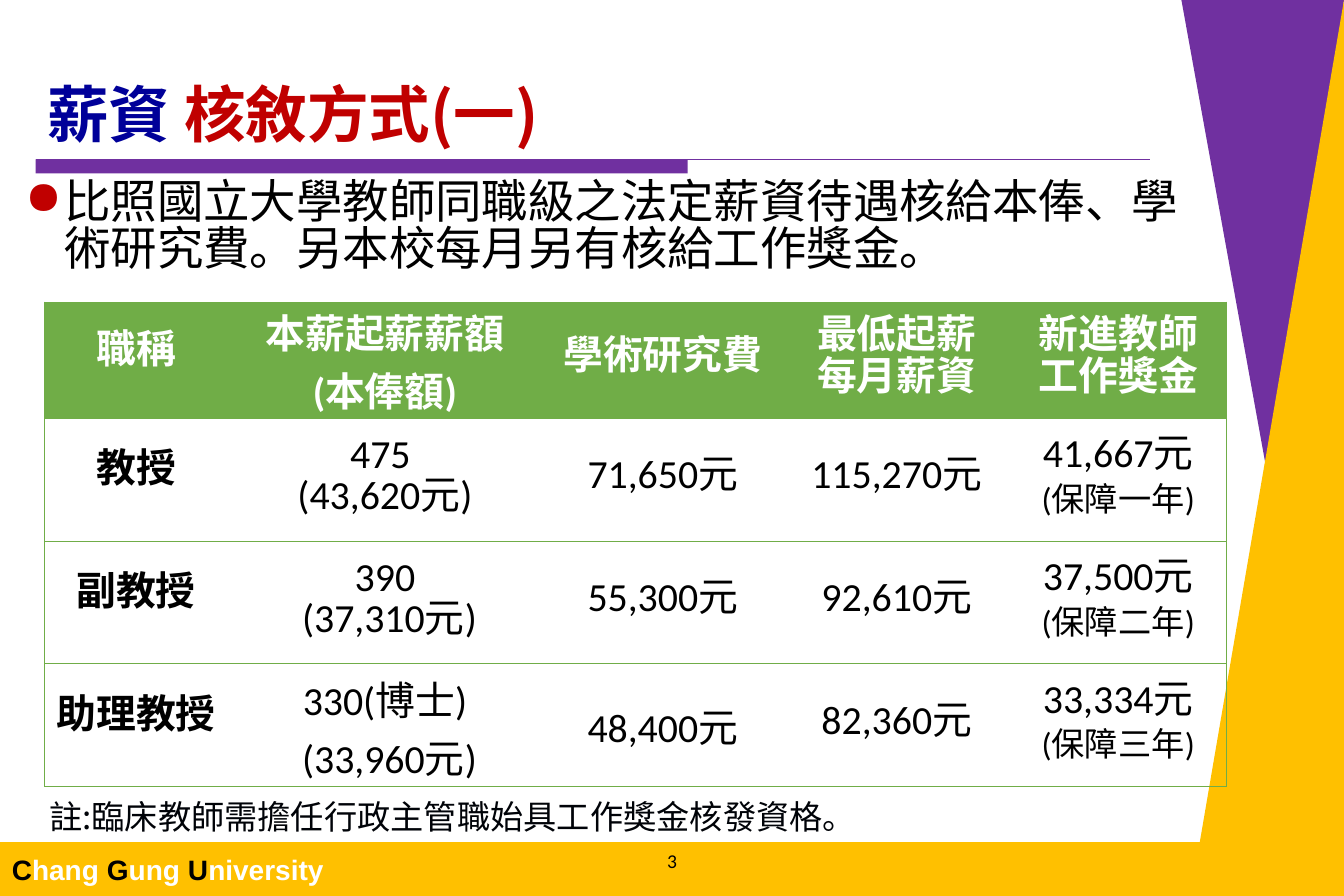
from lxml import etree
from pptx import Presentation
from pptx import util as u
from pptx.dml.color import RGBColor
from pptx.enum import shapes, text
from pptx.oxml.ns import qn

PURPLE = RGBColor(0x70, 0x30, 0xA0)
GOLD = RGBColor(0xFF, 0xC0, 0x00)
GREEN = RGBColor(0x70, 0xAD, 0x47)
NAVY = RGBColor(0x00, 0x00, 0x99)
RED = RGBColor(0xC0, 0x00, 0x00)
INK = RGBColor(0x00, 0x03, 0x08)
BLACK = RGBColor(0x00, 0x00, 0x00)
WHITE = RGBColor(0xFF, 0xFF, 0xFF)
CJK = "Noto Sans CJK SC"
CENTER = text.PP_ALIGN.CENTER
MIDDLE = text.MSO_ANCHOR.MIDDLE


def add_run(p, content, size=24, font="Calibri", color=BLACK, bold=False):
    r = p.add_run()
    r.text = content
    r.font.size, r.font.name, r.font.bold = u.Pt(size), font, bold
    r.font.color.rgb = color
    ea = etree.SubElement(r._r.get_or_add_rPr(), qn("a:ea"))
    ea.set("typeface", CJK)


def write(p, content, align=None, spacing=None, **fmt):
    """Fill a paragraph; a newline in the content is a line break."""
    p.alignment = align
    if spacing:
        p.line_spacing = spacing
    for i, line in enumerate(content.split("\n")):
        if i:
            p.add_line_break()
        add_run(p, line, **fmt)


class Deck:
    def __init__(self, width, height):
        self.prs = Presentation()
        self.prs.slide_width, self.prs.slide_height = u.Pt(width), u.Pt(height)
        self.s = self.prs.slides.add_slide(self.prs.slide_layouts[6])

    def paint(self, sp, color):
        sp.shadow.inherit = False
        sp.fill.solid()
        sp.fill.fore_color.rgb = color
        sp.line.fill.background()
        return sp

    def polygon(self, points, color):
        fb = self.s.shapes.build_freeform(*points[0], scale=float(u.Pt(1)))
        fb.add_line_segments(points[1:], close=True)
        return self.paint(fb.convert_to_shape(), color)

    def rect(self, box, color):
        sp = self.s.shapes.add_shape(shapes.MSO_SHAPE.RECTANGLE, *map(u.Pt, box))
        return self.paint(sp, color)

    def line(self, x1, y1, x2, y2, color, width):
        c = self.s.shapes.add_connector(
            shapes.MSO_CONNECTOR.STRAIGHT, *map(u.Pt, (x1, y1, x2, y2)))
        c.line.color.rgb, c.line.width = color, u.Pt(width)
        etree.SubElement(c._element.spPr, qn("a:effectLst"))

    def textbox(self, box, anchor=text.MSO_ANCHOR.TOP):
        tf = self.s.shapes.add_textbox(*map(u.Pt, box)).text_frame
        tf.word_wrap, tf.vertical_anchor = True, anchor
        return tf.paragraphs[0]

    def bullet(self, p, char, color, indent):
        pPr = p._p.get_or_add_pPr()
        pPr.set("marL", str(u.Pt(indent)))
        pPr.set("indent", str(-u.Pt(indent)))
        clr = etree.SubElement(pPr, qn("a:buClr"))
        etree.SubElement(clr, qn("a:srgbClr")).set("val", str(color))
        etree.SubElement(pPr, qn("a:buChar")).set("char", char)

    def borders(self, cell, sides, color, width):
        tcPr = cell._tc.get_or_add_tcPr()
        for i, side in enumerate("LRTB"):
            ln = etree.Element(qn("a:ln" + side), w=str(u.Pt(width)))
            if side in sides:
                fill = etree.SubElement(ln, qn("a:solidFill"))
                etree.SubElement(fill, qn("a:srgbClr")).set("val", str(color))
            else:
                etree.SubElement(ln, qn("a:noFill"))
            tcPr.insert(i, ln)

    def table(self, x, y, widths, heights):
        tbl = self.s.shapes.add_table(
            len(heights), len(widths),
            *map(u.Pt, (x, y, sum(widths), sum(heights)))).table
        tbl.first_row = tbl.horz_banding = False
        for col, w in zip(tbl.columns, widths):
            col.width = u.Pt(w)
        for row, h in zip(tbl.rows, heights):
            row.height = u.Pt(h)
        return tbl

    def cell(self, cell, lines, fill=None, side=5.2, top=0):
        """Lines are (content, format) pairs, one paragraph each."""
        cell.margin_left = cell.margin_right = u.Pt(side)
        cell.margin_top = cell.margin_bottom = u.Pt(top)
        cell.vertical_anchor = MIDDLE
        if fill is None:
            cell.fill.background()
        else:
            cell.fill.solid()
            cell.fill.fore_color.rgb = fill
        tf = cell.text_frame
        for i, (content, fmt) in enumerate(lines):
            p = tf.add_paragraph() if i else tf.paragraphs[0]
            write(p, content, align=CENTER, **fmt)


ROWS = [
    [["職稱"], ["本薪起薪薪額\n(本俸額)"], ["學術研究費"],
     ["最低起薪", "每月薪資"], ["新進教師工作獎金"]],
    [["教授"], ["475 ", "(43,620元)"], ["71,650元"], ["115,270元"],
     ["41,667元", "(保障一年)"]],
    [["副教授"], ["390", " (37,310元)"], ["55,300元"], ["92,610元"],
     ["37,500元", "(保障二年)"]],
    [["助理教授"], ["330(博士)", " (33,960元)"], ["48,400元"], ["82,360元"],
     ["33,334元", "(保障三年)"]],
]
# Cells with natural line spacing, and those with their own margins
LOOSE = {(0, 1), (3, 1), (3, 2)}
NARROW = {(3, 1), (3, 2)}


def salary_table(d):
    tbl = d.table(27, 182, [110, 190, 145, 137, 130], [70, 74, 74, 74])
    last = len(ROWS[0]) - 1
    for i, row in enumerate(ROWS):
        for j, contents in enumerate(row):
            spacing = None if (i, j) in LOOSE else u.Pt(25 if j else 18)
            lines = [(c, dict(spacing=spacing, size=20 if "保障" in c else 24,
                              bold=i == 0 or j == 0,
                              color=BLACK if i else WHITE)) for c in contents]
            margins = dict(side=0.7, top=3.6) if (i, j) in NARROW else {}
            cell = tbl.cell(i, j)
            d.cell(cell, lines, fill=None if i else GREEN, **margins)
            sides = "TB" + ("L" if j == 0 else "R" if j == last else "")
            d.borders(cell, sides, GREEN, 0.5)


def main():
    d = Deck(810, 540)

    # Side panels and footer
    d.polygon([(810, 0), (712, 0), (770, 320)], PURPLE)
    d.polygon([(810, 0), (723, 508), (810, 508)], GOLD)
    tf = d.rect((0, 507.5, 810, 32.5), GOLD).text_frame
    tf.vertical_anchor = MIDDLE
    p = tf.paragraphs[0]
    p.alignment = text.PP_ALIGN.LEFT
    for word in ("Chang ", "Gung ", "University"):
        add_run(p, word[0], size=16.9, font="Arial", bold=True)
        add_run(p, word[1:], size=16.9, font="Arial", bold=True, color=WHITE)

    # Title and its rule
    d.rect((21.5, 96, 393, 8.5), PURPLE)
    d.line(21.5, 96, 693, 96, PURPLE, 0.75)
    p = d.textbox((21.5, 29, 672, 65.5), text.MSO_ANCHOR.BOTTOM)
    write(p, "薪資 ", spacing=0.9, size=37.1, font=CJK, color=NAVY, bold=True)
    add_run(p, "核敘方式(一)", size=37.1, font=CJK, color=RED, bold=True)

    # Page number
    p = d.textbox((321, 509, 168, 20), MIDDLE)
    write(p, "3", align=CENTER, size=11.8)

    # Salary table
    salary_table(d)

    # Lead statement and note
    p = d.textbox((8, 106, 735, 65.5))
    p.line_spacing = 0.83
    d.bullet(p, "●", RED, 23.75)
    add_run(p, "比照國立大學教師同職級之法定薪資待遇核給本俸、學術研究費。"
               "另本校每月另有核給工作獎金。", size=28, font=CJK)
    write(d.textbox((22.5, 476.5, 773, 31.5)),
          "註:臨床教師需擔任行政主管職始具工作獎金核發資格。",
          size=20, font=CJK, color=INK)

    d.prs.save("out.pptx")


if __name__ == "__main__":
    main()
